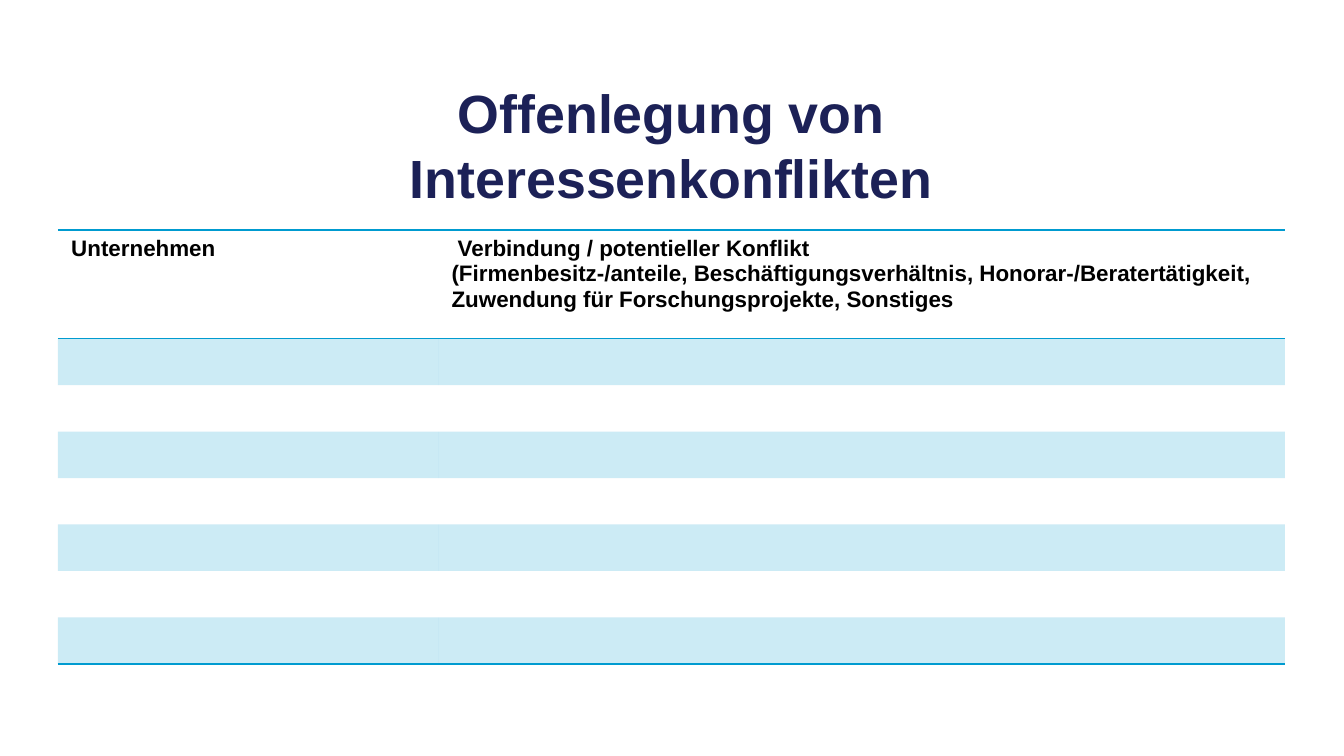
from dataclasses import dataclass

from lxml import etree
from pptx import Presentation
from pptx import util as u
from pptx.dml.color import RGBColor
from pptx.enum import text
from pptx.oxml import ns


@dataclass(frozen=True)
class Theme:
    font: str = "Arial"
    title_color: str = "1C2157"
    text_color: str = "000000"
    accent: str = "009BD0"
    band_alpha: int = 20
    title_size: float = 28.8
    table_size: float = 12
    rule_width: float = 1
    plain_table_style: str = "{2D5ABB26-0587-4C30-8999-92F81FD0307C}"


@dataclass(frozen=True)
class Box:
    left: float
    top: float
    width: float
    height: float

    def lengths(self) -> tuple:
        return tuple(u.Inches(value) for value in
                     (self.left, self.top, self.width, self.height))


THEME = Theme()
SLIDE_WIDTH = 10
SLIDE_HEIGHT = SLIDE_WIDTH * 9 / 16
TITLE_BOX = Box(1.58, 0.61, 6.83, 1.41)
TABLE_BOX = Box(0.43, 1.71, 9.13, 3.23)
COLUMN_WIDTHS = (2.83, 6.3)
ENTRY_COUNT = 7
HEADER_HEIGHT = 0.81
ENTRY_HEIGHT = (TABLE_BOX.height - HEADER_HEIGHT) / ENTRY_COUNT
HEADERS = (
    ("Unternehmen",),
    (" Verbindung / potentieller Konflikt",
     "(Firmenbesitz-/anteile, Beschäftigungsverhältnis, "
     "Honorar-/Beratertätigkeit, Zuwendung für Forschungsprojekte, Sonstiges"),
)


def write_text(frame, lines: tuple, *, size: float, color: str,
               align=text.PP_ALIGN.LEFT) -> None:
    for index, line in enumerate(lines):
        paragraph = frame.add_paragraph() if index else frame.paragraphs[0]
        paragraph.alignment = align
        run = paragraph.add_run()
        run.text = line
        run.font.name = THEME.font
        run.font.size = u.Pt(size)
        run.font.bold = True
        run.font.color.rgb = RGBColor.from_string(color)


def add_title(slide) -> None:
    shape = slide.shapes.add_textbox(*TITLE_BOX.lengths())
    frame = shape.text_frame
    frame.word_wrap = True
    frame.vertical_anchor = text.MSO_ANCHOR.MIDDLE
    frame.margin_top = 0
    frame.margin_bottom = u.Inches(0.48)
    write_text(frame, ("Offenlegung von Interessenkonflikten",),
               size=THEME.title_size, color=THEME.title_color,
               align=text.PP_ALIGN.CENTER)


def add_rules(cell, *sides: str) -> None:
    properties = cell._tc.get_or_add_tcPr()
    for index, side in enumerate(sides):
        line = etree.Element(ns.qn(f"a:ln{side}"), w=str(u.Pt(THEME.rule_width)))
        fill = etree.SubElement(line, ns.qn("a:solidFill"))
        etree.SubElement(fill, ns.qn("a:srgbClr"), val=THEME.accent)
        properties.insert(index, line)


def fill_band(cell) -> None:
    cell.fill.solid()
    cell.fill.fore_color.rgb = RGBColor.from_string(THEME.accent)
    color = cell._tc.tcPr.find(f".//{ns.qn('a:srgbClr')}")
    etree.SubElement(color, ns.qn("a:alpha"), val=str(THEME.band_alpha * 1000))


def set_empty_size(cell) -> None:
    paragraph = cell.text_frame.paragraphs[0]._p
    etree.SubElement(paragraph, ns.qn("a:endParaRPr"),
                     sz=str(int(THEME.table_size * 100)))


def add_disclosure_table(slide) -> None:
    shape = slide.shapes.add_table(ENTRY_COUNT + 1, len(COLUMN_WIDTHS),
                                   *TABLE_BOX.lengths())
    table = shape.table
    table.horz_banding = False
    style = table._tbl.find(f".//{ns.qn('a:tableStyleId')}")
    style.text = THEME.plain_table_style
    for column, width in zip(table.columns, COLUMN_WIDTHS):
        column.width = u.Inches(width)
    for index, row in enumerate(table.rows):
        row.height = u.Inches(ENTRY_HEIGHT if index else HEADER_HEIGHT)
        for cell, lines in zip(row.cells, HEADERS):
            if index % 2:
                fill_band(cell)
            else:
                cell.fill.background()
            if index == 0:
                write_text(cell.text_frame, lines, size=THEME.table_size,
                           color=THEME.text_color)
                add_rules(cell, "T", "B")
            else:
                set_empty_size(cell)
            if index == ENTRY_COUNT:
                add_rules(cell, "B")


def main() -> None:
    presentation = Presentation()
    presentation.slide_width = u.Inches(SLIDE_WIDTH)
    presentation.slide_height = u.Inches(SLIDE_HEIGHT)
    slide = presentation.slides.add_slide(presentation.slide_layouts[6])
    add_title(slide)
    add_disclosure_table(slide)
    presentation.save("out.pptx")


if __name__ == "__main__":
    main()
